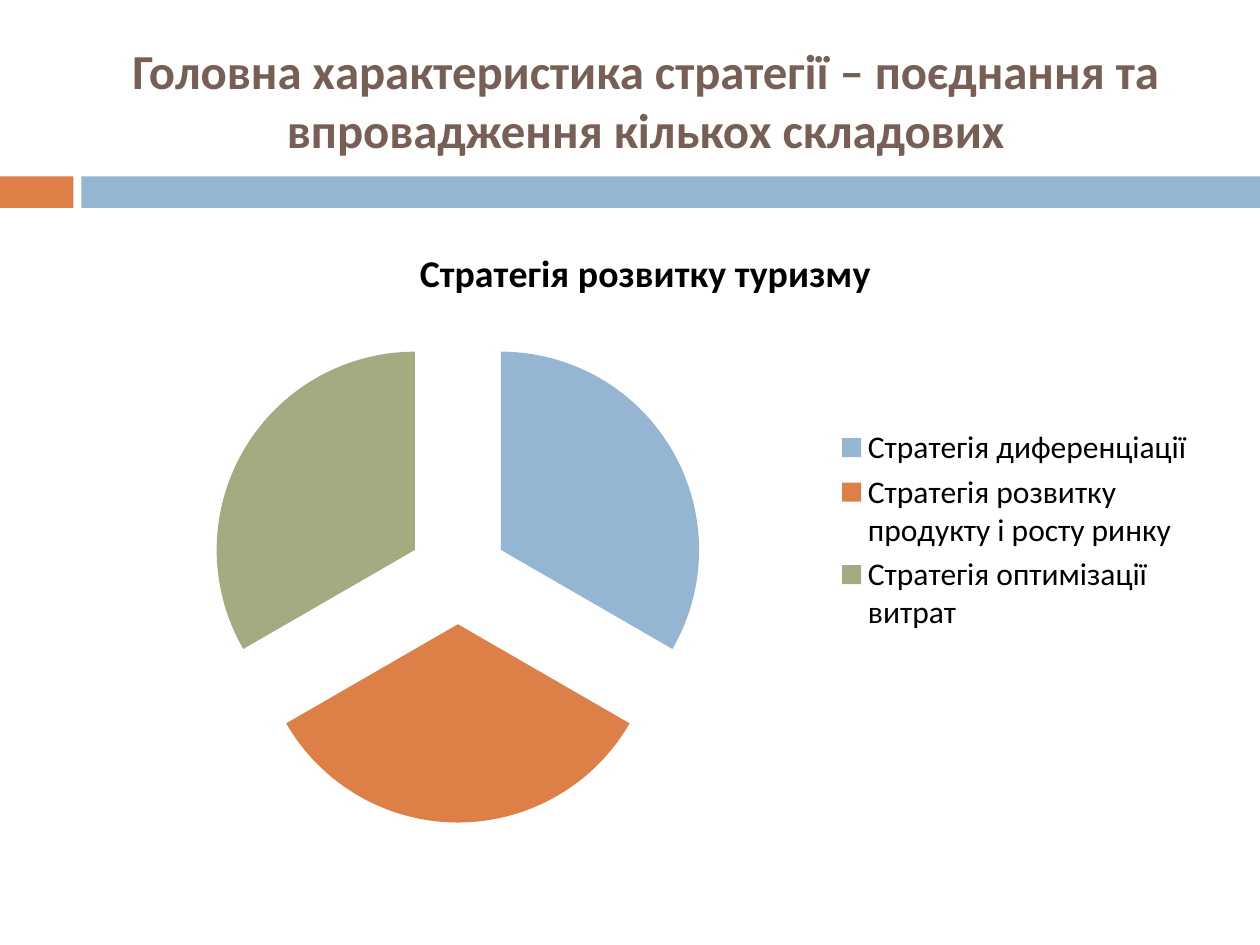
from lxml import etree
from pptx import Presentation
from pptx.chart.data import CategoryChartData
from pptx.dml.color import RGBColor
from pptx.enum.chart import XL_CHART_TYPE, XL_LEGEND_POSITION
from pptx.enum.shapes import MSO_SHAPE
from pptx.enum.text import MSO_ANCHOR, PP_ALIGN
from pptx.oxml.ns import qn
from pptx.util import Pt

BLUE, ORANGE, GREEN = "94B6D2", "DD8047", "A5AB81"
BROWN, BLACK = "775F55", "000000"


def color(hex_code):
    return RGBColor.from_string(hex_code)


class SlideBuilder:
    font_name = "Calibri"

    def __init__(self, slide):
        self.slide = slide

    def style_font(self, font, size, hex_code, bold=False):
        font.name = self.font_name
        font.size = Pt(size)
        font.bold = bold
        font.color.rgb = color(hex_code)

    def bar(self, left, top, width, height, fill):
        rect = self.slide.shapes.add_shape(
            MSO_SHAPE.RECTANGLE, Pt(left), Pt(top), Pt(width), Pt(height))
        rect.shadow.inherit = False
        rect.fill.solid()
        rect.fill.fore_color.rgb = color(fill)
        rect.line.fill.background()

    def heading(self, left, top, width, height, text, size, hex_code):
        frame = self.slide.shapes.add_textbox(
            Pt(left), Pt(top), Pt(width), Pt(height)).text_frame
        frame.word_wrap = True
        frame.vertical_anchor = MSO_ANCHOR.MIDDLE
        paragraph = frame.paragraphs[0]
        paragraph.alignment = PP_ALIGN.CENTER
        run = paragraph.add_run()
        run.text = text
        self.style_font(run.font, size, hex_code, bold=True)

    def exploded_pie(self, left, top, width, height, title, slices, explosion):
        data = CategoryChartData()
        data.categories = [name for name, _, _ in slices]
        data.add_series(title, [value for _, value, _ in slices])
        chart = self.slide.shapes.add_chart(
            XL_CHART_TYPE.PIE, Pt(left), Pt(top), Pt(width), Pt(height), data).chart
        self.style_font(chart.font, 18, BLACK)

        # Chart title
        chart.has_title = True
        run = chart.chart_title.text_frame.paragraphs[0].add_run()
        run.text = title
        self.style_font(run.font, 21.6, BLACK, bold=True)

        # Legend
        chart.has_legend = True
        chart.legend.position = XL_LEGEND_POSITION.RIGHT
        chart.legend.include_in_layout = False

        # Slices, pulled apart
        chart.plots[0].vary_by_categories = True
        series = chart.plots[0].series[0]
        for index, (_, _, fill) in enumerate(slices):
            point_fill = series.points[index].format.fill
            point_fill.solid()
            point_fill.fore_color.rgb = color(fill)
        offset = etree.Element(qn("c:explosion"), val=str(explosion))
        series._element.find(qn("c:dPt")).addprevious(offset)


def main():
    presentation = Presentation()
    presentation.slide_width, presentation.slide_height = Pt(720), Pt(540)
    builder = SlideBuilder(
        presentation.slides.add_slide(presentation.slide_layouts[6]))

    # Divider bars
    builder.bar(0, 100.8, 42, 18, ORANGE)
    builder.bar(46.5, 100.8, 673.5, 18, BLUE)

    # Heading
    builder.heading(
        48, 18, 642, 78,
        "Головна характеристика стратегії – поєднання та впровадження кількох складових",
        27.9, BROWN)

    # Strategy components
    components = [
        ("Стратегія диференціації", 33, BLUE),
        ("Стратегія розвитку продукту і росту ринку", 33, ORANGE),
        ("Стратегія оптимізації витрат", 33, GREEN),
    ]
    builder.exploded_pie(
        48, 126, 642, 354, "Стратегія розвитку туризму", components, 25)

    presentation.save("out.pptx")


if __name__ == "__main__":
    main()
